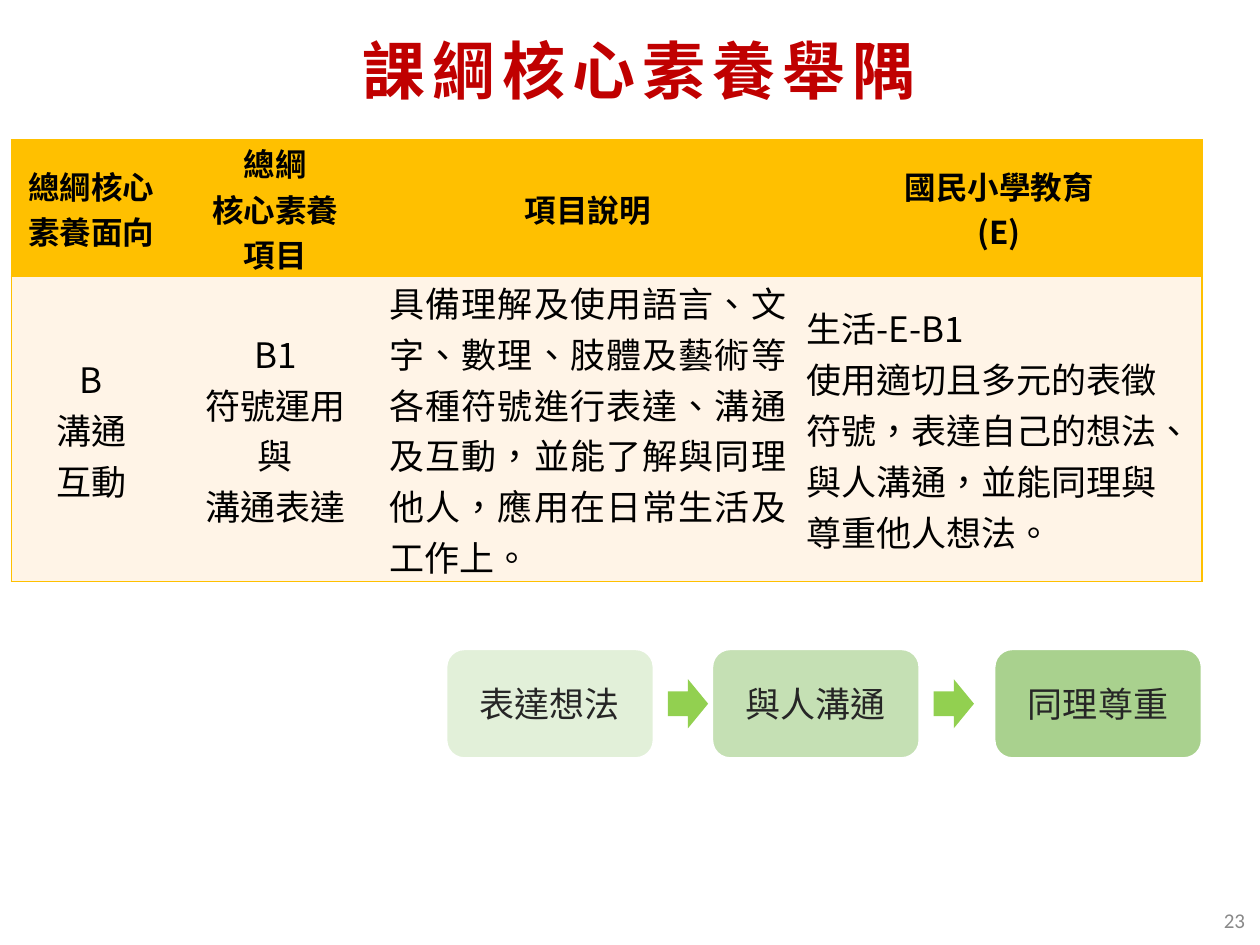
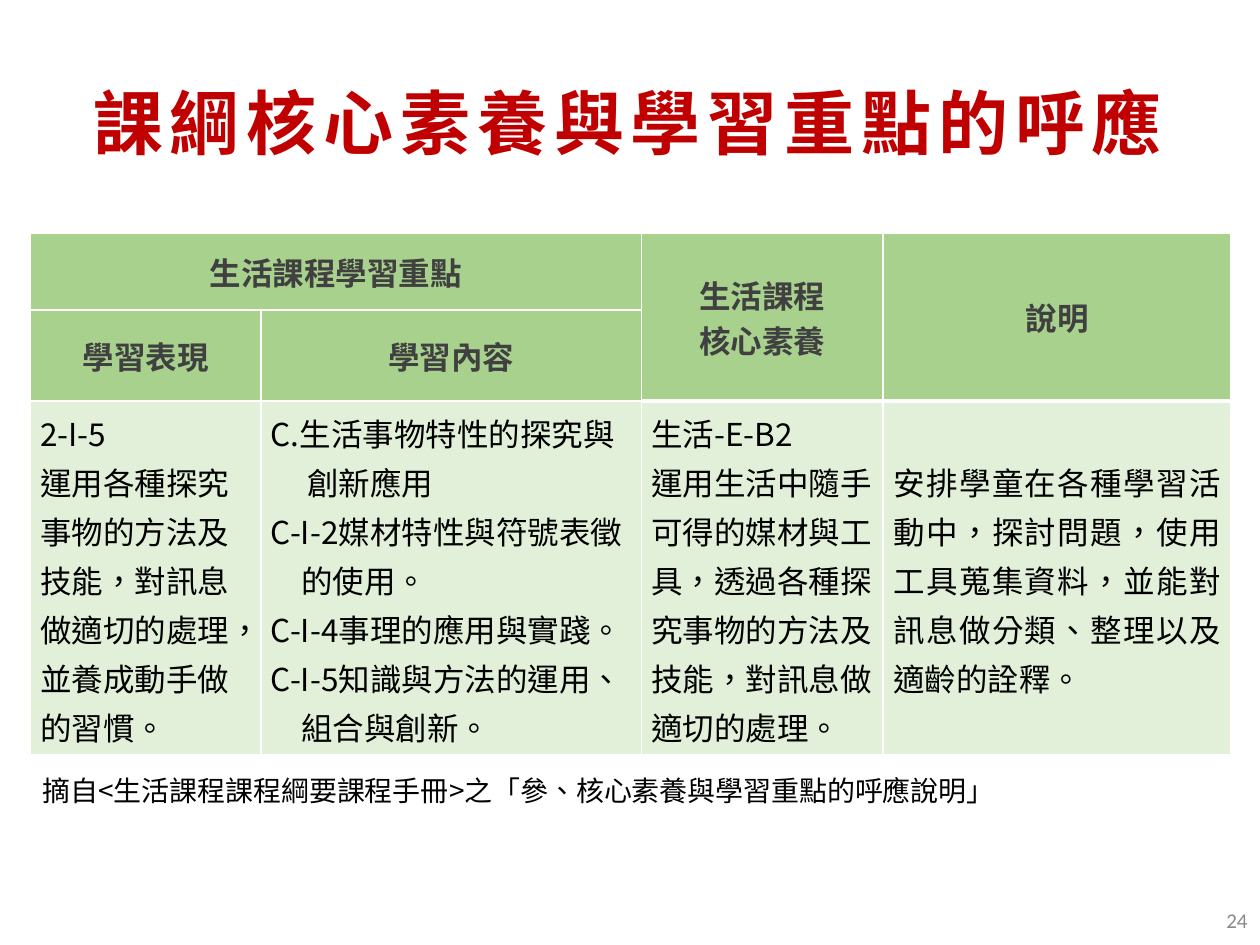
from itertools import product, zip_longest

from lxml.etree import SubElement
from pptx import Presentation
from pptx.dml.color import RGBColor
from pptx.enum.shapes import MSO_SHAPE
from pptx.enum.text import MSO_ANCHOR, MSO_AUTO_SIZE, PP_ALIGN
from pptx.oxml.ns import qn
from pptx.util import Inches, Pt

LEFT, CENTER, RIGHT, JUSTIFY = PP_ALIGN.LEFT, PP_ALIGN.CENTER, PP_ALIGN.RIGHT, PP_ALIGN.JUSTIFY
MIDDLE, TOP = MSO_ANCHOR.MIDDLE, MSO_ANCHOR.TOP
NO_AUTOFIT = MSO_AUTO_SIZE.NONE
ROUNDED, ARROW = MSO_SHAPE.ROUNDED_RECTANGLE, MSO_SHAPE.RIGHT_ARROW
CJK_FONT, NUMBER_FONT = "Noto Sans CJK SC", "Calibri"
RED, BLACK, WHITE, GRAY = "C00000", "000000", "FFFFFF", "898989"
CHARCOAL, INK = "404040", "262626"
GOLD, CREAM = "FFC000", "FFF4E7"
PALE_GREEN, LIGHT_GREEN, GREEN, LIME = "E2F0D9", "C5E0B4", "A9D18E", "92D050"


def paint(fill, color):
    fill.solid()
    fill.fore_color.rgb = RGBColor.from_string(color)


def write(frame, text, size=18, color=BLACK, bold=False, align=LEFT, anchor=MIDDLE,
          font=CJK_FONT, leading=None, tracking=0, hangs=()):
    frame.word_wrap = True
    frame.auto_size = NO_AUTOFIT
    frame.vertical_anchor = anchor
    for index, (line, hang) in enumerate(zip_longest(text.split("\n"), hangs, fillvalue=0)):
        para = frame.add_paragraph() if index else frame.paragraphs[0]
        para.alignment = align
        para.line_spacing = leading
        if hang:
            properties = para._p.get_or_add_pPr()
            properties.set("marL", str(Inches(hang)))
            properties.set("indent", str(-Inches(hang)))
        span = para.add_run()
        span.text = line
        span.font.name, span.font.size, span.font.bold = font, Pt(size), bold
        paint(span.font.fill, color)
        properties = span._r.get_or_add_rPr()
        properties.set("lang", "zh-TW")
        properties.set("spc", str(tracking * 100))
        SubElement(properties, qn("a:ea"), typeface=font)


deck = Presentation()
deck.slide_width, deck.slide_height = Inches(10), Inches(7.5)
UNIT = deck.slide_width // 1000

gold_head = dict(bold=True, align=CENTER)
gold_body = dict(size=20)
green_head = dict(bold=True, align=CENTER, color=CHARCOAL)
green_body = dict(leading=Pt(28))

pages = [
    dict(
        title="課綱核心素養舉隅", title_size=36, title_at=(44, 14, 927, 90),
        number="23", number_left=773,
        table_at=(9, 111), columns=[127, 165, 331, 322], rows=[108, 241],
        head_rows=1, head_fill=GOLD, body_fill=CREAM, border=GOLD, inner=False, merges=[],
        cells=[
            [("總綱核心素養面向", gold_head),
             ("總綱\n核心素養\n項目", gold_head),
             ("項目說明", gold_head),
             ("國民小學教育\n(E)", gold_head)],
            [("B\n溝通\n互動", dict(gold_body, align=CENTER)),
             ("B1\n符號運用\n與\n溝通表達", dict(gold_body, align=CENTER)),
             ("具備理解及使用語言、文字、數理、肢體及藝術等各種符號進行表達、溝通及互動，"
              "並能了解與同理他人，應用在日常生活及工作上。", dict(gold_body, align=JUSTIFY)),
             ("生活-E-B1\n使用適切且多元的表徵符號，表達自己的想法、與人溝通，"
              "並能同理與尊重他人想法。", gold_body)],
        ],
    ),
    dict(
        title="課綱核心素養與學習重點的呼應", title_size=40, title_at=(21, 49, 955, 103),
        number="24", number_left=775,
        table_at=(24, 185), columns=[183, 302, 192, 276], rows=[61, 59, 281],
        head_rows=2, head_fill=GREEN, body_fill=PALE_GREEN, border=WHITE, inner=True,
        merges=[(0, 0, 0, 1), (0, 2, 1, 2), (0, 3, 1, 3)],
        cells=[
            [("生活課程學習重點", green_head), None,
             ("生活課程\n核心素養", green_head), ("說明", green_head)],
            [("學習表現", green_head), ("學習內容", green_head), None, None],
            [("2-I-5\n運用各種探究事物的方法及技能，對訊息做適切的處理，並養成動手做的習慣。",
              green_body),
             ("C.生活事物特性的探究與創新應用\nC-I-2媒材特性與符號表徵的使用。\n"
              "C-I-4事理的應用與實踐。\nC-I-5知識與方法的運用、組合與創新。",
              dict(green_body, hangs=(0.29, 0.24, 0.24, 0.24))),
             ("生活-E-B2\n運用生活中隨手可得的媒材與工具，透過各種探究事物的方法及技能，"
              "對訊息做適切的處理。", green_body),
             ("安排學童在各種學習活動中，探討問題，使用工具蒐集資料，"
              "並能對訊息做分類、整理以及適齡的詮釋。", dict(green_body, align=JUSTIFY))],
        ],
    ),
]

for content in pages:
    page = deck.slides.add_slide(deck.slide_layouts[5])
    title = page.shapes.title
    title.left, title.top, title.width, title.height = [n * UNIT for n in content["title_at"]]
    write(title.text_frame, content["title"], size=content["title_size"], color=RED, bold=True,
          align=CENTER, leading=0.9, tracking=4)

    number = page.shapes.add_textbox(content["number_left"] * UNIT, 710 * UNIT, 225 * UNIT, 40 * UNIT)
    write(number.text_frame, content["number"], size=12, color=GRAY, align=RIGHT, font=NUMBER_FONT)

    columns, rows, head_rows = content["columns"], content["rows"], content["head_rows"]
    left, top = content["table_at"]
    table = page.shapes.add_table(len(rows), len(columns), left * UNIT, top * UNIT,
                                  sum(columns) * UNIT, sum(rows) * UNIT).table
    table.first_row = table.horz_banding = False
    for column, width in zip(table.columns, columns):
        column.width = width * UNIT
    for row, height in zip(table.rows, rows):
        row.height = height * UNIT
    for first_row, first_column, last_row, last_column in content["merges"]:
        table.cell(first_row, first_column).merge(table.cell(last_row, last_column))

    merged_columns = {merge[1] for merge in content["merges"] if merge[2] > merge[0]}
    for r, c in product(range(len(rows)), range(len(columns))):
        cell = table.cell(r, c)
        is_head = r < head_rows
        cell.margin_left = cell.margin_right = Inches(0.08)
        cell.margin_top = cell.margin_bottom = 0
        cell.vertical_anchor = MIDDLE
        under_head = c in merged_columns
        edges = {
            "lnL": (c == 0, 1),
            "lnR": (c == len(columns) - 1, 1),
            "lnT": (r in (0, head_rows), 3 if under_head and r == head_rows else 1),
            "lnB": (r in (head_rows - 1, len(rows) - 1), 3 if under_head and is_head else 1),
        }
        for edge, (is_outer, points) in edges.items():
            line = SubElement(cell._tc.get_or_add_tcPr(), qn("a:" + edge), w=str(Pt(points)))
            if is_outer or content["inner"]:
                SubElement(SubElement(line, qn("a:solidFill")), qn("a:srgbClr"), val=content["border"])
            else:
                SubElement(line, qn("a:noFill"))
        paint(cell.fill, content["head_fill"] if is_head else content["body_fill"])
        if content["cells"][r][c]:
            text, style = content["cells"][r][c]
            write(cell.text_frame, text, **style)

example_page, response_page = deck.slides

for step_left, text, color in [(354, "表達想法", PALE_GREEN), (565, "與人溝通", LIGHT_GREEN),
                               (789, "同理尊重", GREEN)]:
    step = example_page.shapes.add_shape(ROUNDED, step_left * UNIT, 515 * UNIT, 165 * UNIT, 87 * UNIT)
    step.shadow.inherit = False
    paint(step.fill, color)
    paint(step.line.fill, WHITE)
    step.line.width = Pt(1.5)
    write(step.text_frame, text, size=20, color=INK, align=CENTER)

for arrow_left in (530, 741):
    arrow = example_page.shapes.add_shape(ARROW, arrow_left * UNIT, 539 * UNIT, 32 * UNIT, 39 * UNIT)
    arrow.shadow.inherit = False
    paint(arrow.fill, LIME)
    arrow.line.fill.background()

source = response_page.shapes.add_textbox(24 * UNIT, 609 * UNIT, 794 * UNIT, 37 * UNIT)
write(source.text_frame, "摘自<生活課程課程綱要課程手冊>之「參、核心素養與學習重點的呼應說明」",
      size=16, anchor=TOP)

deck.save("out.pptx")
